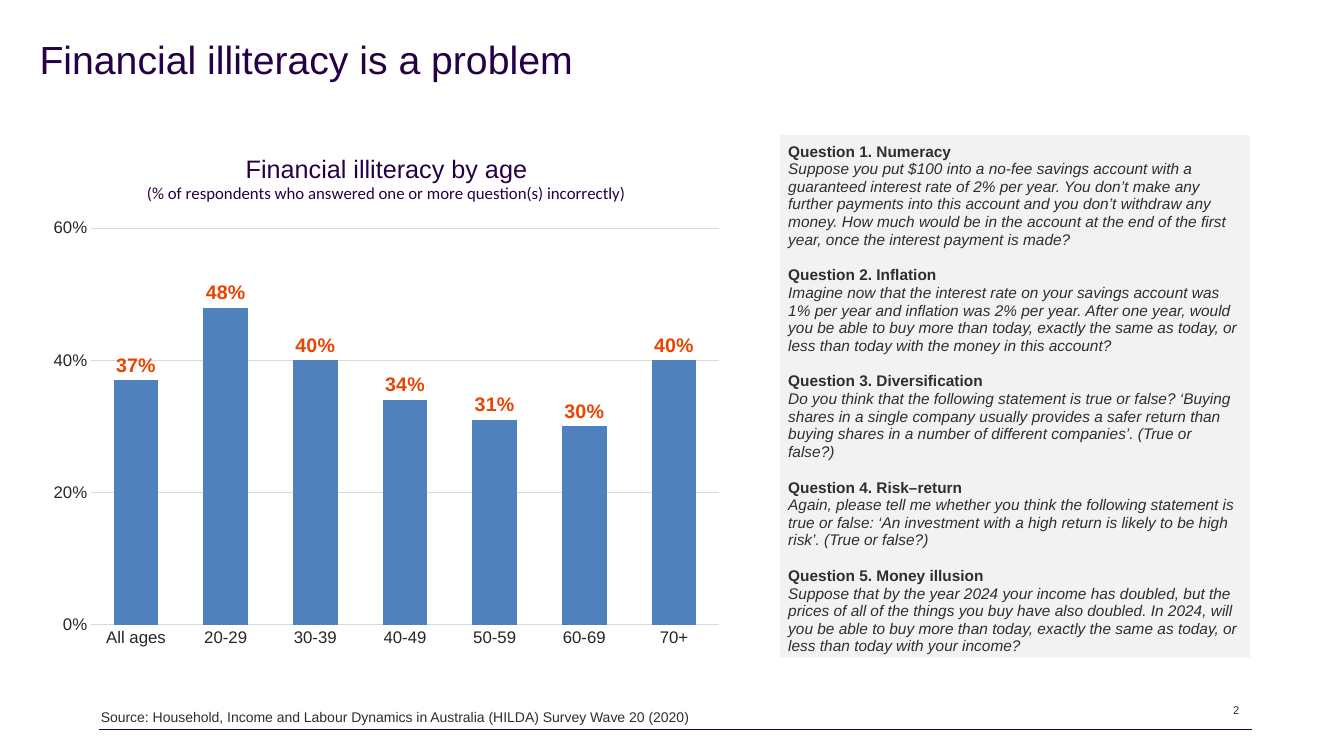
import pptx
import pptx.chart.data
import pptx.dml.color
import pptx.enum.chart
import pptx.enum.shapes
import pptx.enum.text
import pptx.oxml
import pptx.oxml.ns
import pptx.util

Pt = pptx.util.Pt
ALIGN = pptx.enum.text.PP_ALIGN
ANCHOR = pptx.enum.text.MSO_ANCHOR

COLOURS = {
    "purple": "260046",
    "text": "2E2E2E",
    "axis": "262626",
    "grid": "D9D9D9",
    "bar": "4F81BD",
    "label": "EA4403",
    "panel": "F2F2F2",
}

AGE_GROUPS = ["All ages", "20-29", "30-39", "40-49", "50-59", "60-69", "70+"]
ILLITERACY = [0.37, 0.48, 0.40, 0.34, 0.31, 0.30, 0.40]

QUESTIONS = [
    ("Question 1. Numeracy",
     "Suppose you put $100 into a no-fee savings account with a guaranteed interest rate of 2% per year. "
     "You don’t make any further payments into this account and you don’t withdraw any money. How much "
     "would be in the account at the end of the first year, once the interest payment is made?"),
    ("Question 2. Inflation",
     "Imagine now that the interest rate on your savings account was 1% per year and inflation was 2% per "
     "year. After one year, would you be able to buy more than today, exactly the same as today, or less "
     "than today with the money in this account?"),
    ("Question 3. Diversification",
     "Do you think that the following statement is true or false? ‘Buying shares in a single company "
     "usually provides a safer return than buying shares in a number of different companies’. (True or false?)"),
    ("Question 4. Risk–return",
     "Again, please tell me whether you think the following statement is true or false: ‘An investment "
     "with a high return is likely to be high risk’. (True or false?)"),
    ("Question 5. Money illusion",
     "Suppose that by the year 2024 your income has doubled, but the prices of all of the things you buy "
     "have also doubled. In 2024, will you be able to buy more than today, exactly the same as today, or "
     "less than today with your income?"),
]


def colour(name):
    """Return the named colour."""
    return pptx.dml.color.RGBColor.from_string(COLOURS[name])


def format_font(font, size, shade, name="Arial", bold=False, italic=False):
    """Set the look of a font."""
    font.size, font.name, font.bold, font.italic = Pt(size), name, bold, italic
    font.color.rgb = colour(shade)


def add_run(paragraph, text, **style):
    """Append a formatted run to a paragraph."""
    run = paragraph.add_run()
    run.text = text
    format_font(run.font, **style)


def set_frame(frame, margin=0, anchor=ANCHOR.TOP):
    """Set wrapping, margins and anchor of a text frame."""
    frame.word_wrap = True
    frame.vertical_anchor = anchor
    frame.margin_left = frame.margin_right = Pt(margin)
    frame.margin_top = frame.margin_bottom = Pt(margin)


def add_text(slide, box, text, anchor=ANCHOR.TOP, align=ALIGN.LEFT, spacing=0.95, **style):
    """Place one formatted paragraph in a box."""
    frame = slide.shapes.add_textbox(*map(Pt, box)).text_frame
    set_frame(frame, anchor=anchor)
    paragraph = frame.paragraphs[0]
    paragraph.alignment, paragraph.line_spacing = align, spacing
    add_run(paragraph, text, **style)


def set_layout(element, x, y, width=None, height=None):
    """Fix a chart part at fractions of the chart area."""
    entries = [("xMode", "edge"), ("yMode", "edge"), ("x", x), ("y", y)]
    if width:
        entries.insert(0, ("layoutTarget", "inner"))
        entries += [("w", width), ("h", height)]
    body = "".join(f'<c:{tag} val="{value}"/>' for tag, value in entries)
    namespace = pptx.oxml.ns.nsdecls("c")
    layout = pptx.oxml.parse_xml(
        f"<c:layout {namespace}><c:manualLayout>{body}</c:manualLayout></c:layout>")
    for previous in element.findall(pptx.oxml.ns.qn("c:layout")):
        element.remove(previous)
    text = element.find(pptx.oxml.ns.qn("c:tx"))
    if text is None:
        element.insert(0, layout)
    else:
        text.addnext(layout)


def format_axis(axis):
    """Set what both chart axes share."""
    axis.major_tick_mark = axis.minor_tick_mark = pptx.enum.chart.XL_TICK_MARK.NONE
    format_font(axis.tick_labels.font, 12, "axis")


def add_age_chart(slide, box):
    """Draw the column chart of illiteracy by age group."""
    data = pptx.chart.data.CategoryChartData(number_format="0%")
    data.categories = AGE_GROUPS
    data.add_series("Series 1", ILLITERACY)
    chart = slide.shapes.add_chart(
        pptx.enum.chart.XL_CHART_TYPE.COLUMN_CLUSTERED, *map(Pt, box), data).chart
    chart.has_legend = False
    chart.font.size, chart.font.name = Pt(10), "Calibri"

    chart.has_title = True
    title = chart.chart_title
    title.include_in_layout = False
    heading = title.text_frame.paragraphs[0]
    add_run(heading, "Financial illiteracy by age", size=18, shade="purple")
    add_run(title.text_frame.add_paragraph(),
            "(% of respondents who answered one or more question(s) incorrectly)",
            size=12, shade="purple", name="Calibri")
    plot_area = chart.plots[0]._element.getparent()
    set_layout(chart._chartSpace.chart.find(pptx.oxml.ns.qn("c:title")), 0.151, 0.031)
    set_layout(plot_area, 0.075, 0.18, 0.905, 0.758)

    format_axis(chart.category_axis)
    chart.category_axis.format.line.color.rgb = colour("grid")
    chart.category_axis.format.line.width = Pt(0.75)
    values = chart.value_axis
    format_axis(values)
    values.minimum_scale, values.maximum_scale, values.major_unit = 0, 0.6, 0.2
    values.format.line.fill.background()
    values.major_gridlines.format.line.color.rgb = colour("grid")
    values.major_gridlines.format.line.width = Pt(0.75)
    values.tick_labels.number_format = "0%"
    values.tick_labels.number_format_is_linked = False

    plot = chart.plots[0]
    plot.gap_width, plot.overlap, plot.vary_by_categories = 100, -42, False
    bars = plot.series[0].format.fill
    bars.solid()
    bars.fore_color.rgb = colour("bar")
    plot.has_data_labels = True
    labels = plot.data_labels
    labels.show_value = True
    labels.number_format, labels.number_format_is_linked = "0%", False
    labels.position = pptx.enum.chart.XL_LABEL_POSITION.OUTSIDE_END
    format_font(labels.font, 14, "label", bold=True)


def add_question_panel(slide, box):
    """Draw the shaded panel that lists the survey questions."""
    panel = slide.shapes.add_shape(pptx.enum.shapes.MSO_SHAPE.RECTANGLE, *map(Pt, box))
    panel.shadow.inherit = False
    panel.fill.solid()
    panel.fill.fore_color.rgb = colour("panel")
    panel.line.fill.background()
    frame = panel.text_frame
    set_frame(frame, margin=5.75)
    for index, (heading, question) in enumerate(QUESTIONS):
        paragraph = frame.add_paragraph() if index else frame.paragraphs[0]
        paragraph.alignment, paragraph.line_spacing = ALIGN.LEFT, 0.95
        paragraph.space_before, paragraph.space_after = Pt(8 if index else 0), Pt(5)
        add_run(paragraph, heading, size=11, shade="text", bold=True)
        paragraph.add_line_break()
        add_run(paragraph, question, size=11, shade="text", italic=True)


def add_footer(slide, box):
    """Draw the source, the page number and the rule below them."""
    left, top, width, height = box
    bottom = top + height
    rule = slide.shapes.add_connector(
        pptx.enum.shapes.MSO_CONNECTOR.STRAIGHT, *map(Pt, (left, bottom, left + width, bottom)))
    rule.line.color.rgb = colour("purple")
    rule.line.width = Pt(0.5)
    rule._element.spPr.append(
        pptx.oxml.parse_xml(f'<a:effectLst {pptx.oxml.ns.nsdecls("a")}/>'))
    add_text(slide, (left + 1.4, top, 451.5, 17.3),
             "Source: Household, Income and Labour Dynamics in Australia (HILDA) Survey Wave 20 (2020)",
             anchor=ANCHOR.BOTTOM, size=10, shade="text")
    add_text(slide, (left + width - 26, top, 17.3, 10.8), "2",
             anchor=ANCHOR.BOTTOM, align=ALIGN.RIGHT, size=8, shade="text")


def main():
    """Build and save the presentation."""
    presentation = pptx.Presentation()
    presentation.slide_width, presentation.slide_height = Pt(960), Pt(540)
    slide = presentation.slides.add_slide(presentation.slide_layouts[6])
    add_footer(slide, (70.6, 501.3, 823.4, 19.9))
    add_text(slide, (28.3, 28.8, 828, 38), "Financial illiteracy is a problem",
             spacing=0.9, size=28, shade="purple")
    add_age_chart(slide, (28, 95.8, 495.4, 373.7))
    add_question_panel(slide, (557.3, 96.5, 335.5, 373))
    presentation.save("out.pptx")


if __name__ == "__main__":
    main()
